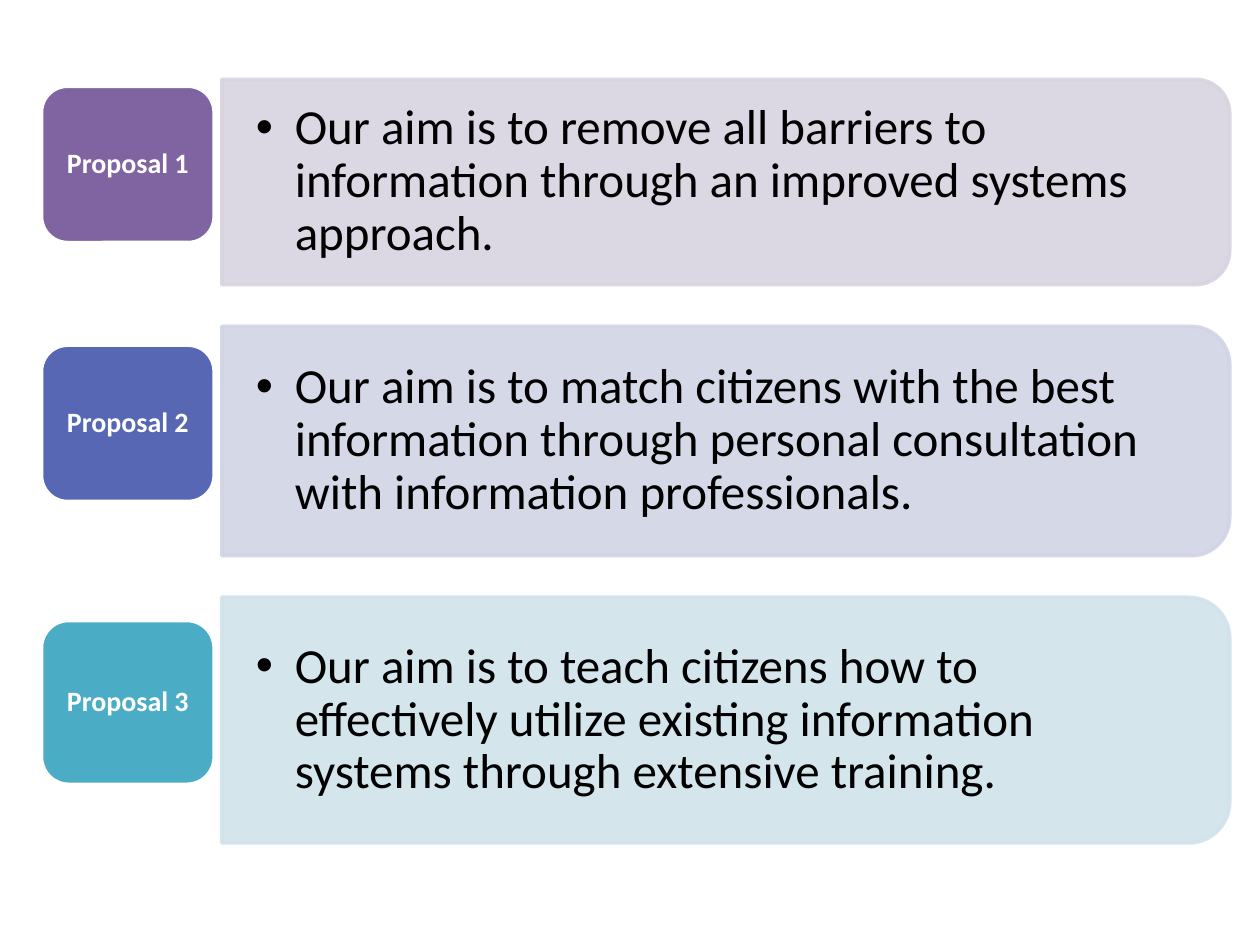
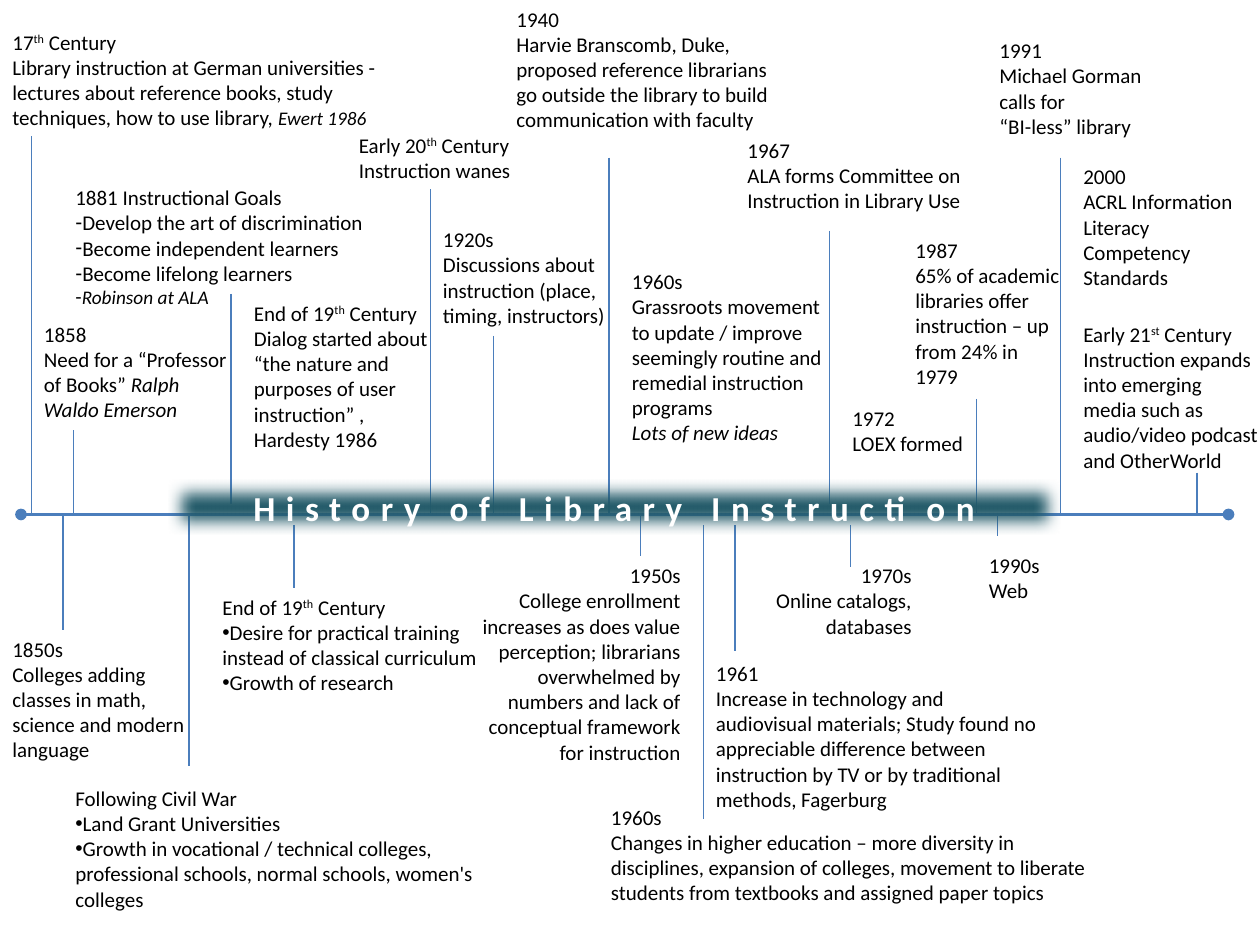
from lxml import etree
from pptx import Presentation
from pptx import util as u
from pptx.dml.color import RGBColor
from pptx.enum import shapes, text
from pptx.oxml.ns import qn

BLACK = RGBColor(0x00, 0x00, 0x00)
WHITE = RGBColor(0xFF, 0xFF, 0xFF)
LINE_BLUE = RGBColor(0x4B, 0x7E, 0xBC)
BAND_TEAL = RGBColor(0x21, 0x59, 0x68)
PURPLE, PALE_PURPLE = RGBColor(0x80, 0x64, 0xA2), RGBColor(0xD8, 0xD3, 0xE0)
INDIGO, PALE_INDIGO = RGBColor(0x57, 0x67, 0xB4), RGBColor(0xD1, 0xD4, 0xE5)
AQUA, PALE_AQUA = RGBColor(0x4B, 0xAC, 0xC6), RGBColor(0xD0, 0xE3, 0xEA)
FONT = "Calibri"

presentation = Presentation()
presentation.slide_width = u.Inches(10)
presentation.slide_height = u.Inches(7.5)
CELL = presentation.slide_width / 120


def format_run(run, size, color, bold=None):
    run.font.name = FONT
    run.font.size = u.Pt(size)
    run.font.color.rgb = color
    run.font.bold = bold


def add_bullet(paragraph, character, indent=0):
    properties = paragraph._p.get_or_add_pPr()
    properties.set("marL", str(u.Inches(indent)))
    properties.set("indent", str(-u.Inches(indent)))
    etree.SubElement(properties, qn("a:buFont")).set("typeface", "Arial")
    etree.SubElement(properties, qn("a:buChar")).set("char", character)


slide = presentation.slides.add_slide(presentation.slide_layouts[6])
PANEL_LEFT, PANEL_WIDTH, PANEL_GAP = 1.76, 8, 0.33
LABEL_LEFT, LABEL_WIDTH, LABEL_RISE = 0.33, 1.37, 0.14
proposals = [
    (1.63, 1.24, PURPLE, PALE_PURPLE,
     "Our aim is to remove all barriers to information through an improved systems approach."),
    (1.82, 1.24, INDIGO, PALE_INDIGO,
     "Our aim is to match citizens with the best information through personal consultation "
     "with information professionals."),
    (1.95, 1.3, AQUA, PALE_AQUA,
     "Our aim is to teach citizens how to effectively utilize existing information systems "
     "through extensive training."),
]
top = 0.63
for number, (height, label_height, strong, pale, aim) in enumerate(proposals, 1):
    middle = top + height / 2
    panel = slide.shapes.add_shape(
        shapes.MSO_SHAPE.ROUND_2_SAME_RECTANGLE,
        u.Inches(PANEL_LEFT + (PANEL_WIDTH - height) / 2), u.Inches(middle - PANEL_WIDTH / 2),
        u.Inches(height), u.Inches(PANEL_WIDTH))
    panel.rotation = 90
    panel.shadow.inherit = False
    panel.fill.solid()
    panel.fill.fore_color.rgb = pale
    panel.line.color.rgb = pale
    panel.line.width = u.Pt(2)
    for color in panel._element.spPr.iter(qn("a:srgbClr")):
        etree.SubElement(color, qn("a:alpha")).set("val", "90000")

    box = slide.shapes.add_textbox(u.Inches(PANEL_LEFT), u.Inches(top + 0.08),
                                   u.Inches(PANEL_WIDTH - 0.08), u.Inches(height - 0.16))
    frame = box.text_frame
    frame.word_wrap = True
    frame.vertical_anchor = text.MSO_ANCHOR.MIDDLE
    frame.margin_left = frame.margin_right = u.Inches(0.27)
    frame.margin_top = frame.margin_bottom = u.Inches(0.14)
    frame.text = aim
    paragraph = frame.paragraphs[0]
    paragraph.level = 1
    paragraph.line_spacing = 0.9
    add_bullet(paragraph, "•", 0.31)
    format_run(paragraph.runs[0], 28, BLACK)

    label = slide.shapes.add_shape(
        shapes.MSO_SHAPE.ROUNDED_RECTANGLE,
        u.Inches(LABEL_LEFT), u.Inches(middle - LABEL_RISE - label_height / 2),
        u.Inches(LABEL_WIDTH), u.Inches(label_height))
    label.shadow.inherit = False
    label.fill.solid()
    label.fill.fore_color.rgb = strong
    label.line.color.rgb = WHITE
    label.line.width = u.Pt(2)
    frame = label.text_frame
    frame.margin_left = frame.margin_right = u.Inches(0.07)
    frame.text = f"Proposal {number}"
    frame.paragraphs[0].alignment = text.PP_ALIGN.CENTER
    frame.paragraphs[0].line_spacing = 0.9
    format_run(frame.paragraphs[0].runs[0], 16, WHITE, True)
    top += height + PANEL_GAP

slide = presentation.slides.add_slide(presentation.slide_layouts[5])
AXIS = 49
stems = [
    (3, 13, AXIS), (7, 41, AXIS), (22, 28, AXIS - 1), (41, 18, AXIS), (47, 32, AXIS),
    (58, 15, AXIS), (79, 22, AXIS - 1), (93, 38, AXIS), (101, 15, AXIS), (114, 45, AXIS),
    (6, AXIS, 60), (18, AXIS, 73), (28, AXIS + 1, 56), (61, AXIS, 53), (67, AXIS + 1, 78),
    (70, AXIS + 1, 62), (81, AXIS + 1, 54), (95, AXIS, 51),
]
segments = [(2, AXIS, 117, AXIS, 2.25)]
segments += [(column, start, column, end, 1) for column, start, end in stems]
for left, top, right, bottom, weight in segments:
    line = slide.shapes.add_connector(
        shapes.MSO_CONNECTOR.STRAIGHT,
        *(u.Emu(int(place * CELL)) for place in (left, top, right, bottom)))
    line.line.color.rgb = LINE_BLUE
    line.line.width = u.Pt(weight)
    if top == bottom:
        for end in ("a:headEnd", "a:tailEnd"):
            etree.SubElement(line.line._get_or_add_ln(), qn(end)).set("type", "oval")
    etree.SubElement(line._element.spPr, qn("a:effectLst"))

title = slide.shapes.title
title.left, title.top, title.width, title.height = (
    u.Emu(int(place * CELL)) for place in (16, 45.7, 85, 5.25))
title.fill.solid()
title.fill.fore_color.rgb = BAND_TEAL
effects = etree.SubElement(title._element.spPr, qn("a:effectLst"))
etree.SubElement(effects, qn("a:softEdge")).set("rad", "112500")
title.text_frame.text = "History of Library Instruction"
title.text_frame.auto_size = text.MSO_AUTO_SIZE.NONE
title.text_frame.vertical_anchor = text.MSO_ANCHOR.MIDDLE
title_run = title.text_frame.paragraphs[0].runs[0]
format_run(title_run, 20, WHITE, True)
title_run.font._element.set("spc", "600")
slide.shapes._spTree.append(title._element)

LEFT, RIGHT = text.PP_ALIGN.LEFT, text.PP_ALIGN.RIGHT
events = [
    (0, 2.2, 39, 11, LEFT, [
        "17|^th| Century",
        "Library instruction at German universities - lectures about reference books, study "
        "techniques, how to use library, |~Ewert 1986"]),
    (6, 17, 31, 13.3, LEFT, [
        "1881 Instructional Goals", "-Develop the art of discrimination",
        "-Become independent learners", "-Become lifelong learners", "-|~Robinson at ALA"]),
    (3, 30, 20, 11, LEFT, [
        "1858", "Need for a “Professor of Books” |/Ralph Waldo Emerson"]),
    (23, 28, 20, 15.7, LEFT, [
        "End of 19|^th| Century",
        "Dialog started about “the nature and purposes of user instruction” , Hardesty 1986"]),
    (33, 12, 18, 6, LEFT, ["Early 20|^th| Century", "Instruction wanes"]),
    (41, 21, 22, 11, LEFT, [
        "1920s", "Discussions about instruction (place, timing, instructors)"]),
    (48, 0, 27, 13.3, LEFT, [
        "1940",
        "Harvie Branscomb, Duke, proposed reference librarians go outside the library to build "
        "communication with faculty"]),
    (59, 25, 22, 18, LEFT, [
        "1960s",
        "Grassroots movement to update / improve seemingly routine and remedial instruction "
        "programs", "|/Lots of new ideas"]),
    (70, 12.5, 28, 8.5, LEFT, [
        "1967", "ALA forms Committee on Instruction in Library Use"]),
    (80, 38, 13, 6, LEFT, ["1972", "LOEX formed"]),
    (86, 22, 19, 15.7, LEFT, [
        "1987", "65% of academic libraries offer instruction – up from 24% in", "1979"]),
    (94, 3, 20, 11, LEFT, ["1991", "Michael Gorman", "calls for", "“BI-less” library"]),
    (102, 15, 18, 13.3, LEFT, [
        "2000", "ACRL Information Literacy Competency Standards"]),
    (102, 30, 19, 18, LEFT, [
        "Early 21|^st| Century",
        "Instruction expands into emerging media such as audio/video podcast and OtherWorld"]),
    (0, 60, 19, 13.3, LEFT, [
        "1850s", "Colleges adding classes in math, science and modern language"]),
    (6, 74.2, 41, 13.3, LEFT, [
        "Following Civil War", "•Land Grant Universities",
        "•Growth in vocational / technical colleges, professional schools, normal schools, "
        "women's colleges"]),
    (20, 56, 31, 11, LEFT, [
        "End of 19|^th| Century",
        "•Desire for practical training instead of classical curriculum",
        "•Growth of research"]),
    (43, 53, 23, 20.6, RIGHT, [
        "1950s",
        "College enrollment increases as does value perception; librarians overwhelmed by "
        "numbers and lack of conceptual framework for instruction"]),
    (57, 76, 50, 11, LEFT, [
        "1960s",
        "Changes in higher education – more diversity in disciplines, expansion of colleges, "
        "movement to liberate students from textbooks and assigned paper topics"]),
    (67, 62.3, 33, 15.7, LEFT, [
        "1961",
        "Increase in technology and audiovisual materials; Study found no appreciable "
        "difference between instruction by TV or by traditional methods, Fagerburg"]),
    (72, 53, 16, 8.5, RIGHT, ["1970s", "Online catalogs, databases"]),
    (93, 52, 11, 6, LEFT, ["1990s", "Web"]),
]
for left, top, width, height, alignment, lines in events:
    box = slide.shapes.add_textbox(
        *(u.Emu(int(place * CELL)) for place in (left, top, width, height)))
    frame = box.text_frame
    frame.word_wrap = True
    for index, content in enumerate(lines):
        paragraph = frame.add_paragraph() if index else frame.paragraphs[0]
        paragraph.alignment = alignment
        if content[0] in "•-":
            add_bullet(paragraph, content[0])
            content = content[1:]
        for position, piece in enumerate(content.split("|")):
            if not piece:
                continue
            mark = piece[0] if position % 2 else ""
            run = paragraph.add_run()
            run.text = piece[len(mark):]
            format_run(run, 11 if mark == "~" else 12, BLACK)
            if mark == "^":
                run.font._element.set("baseline", "30000")
            elif mark:
                run.font.italic = True

presentation.save("out.pptx")
